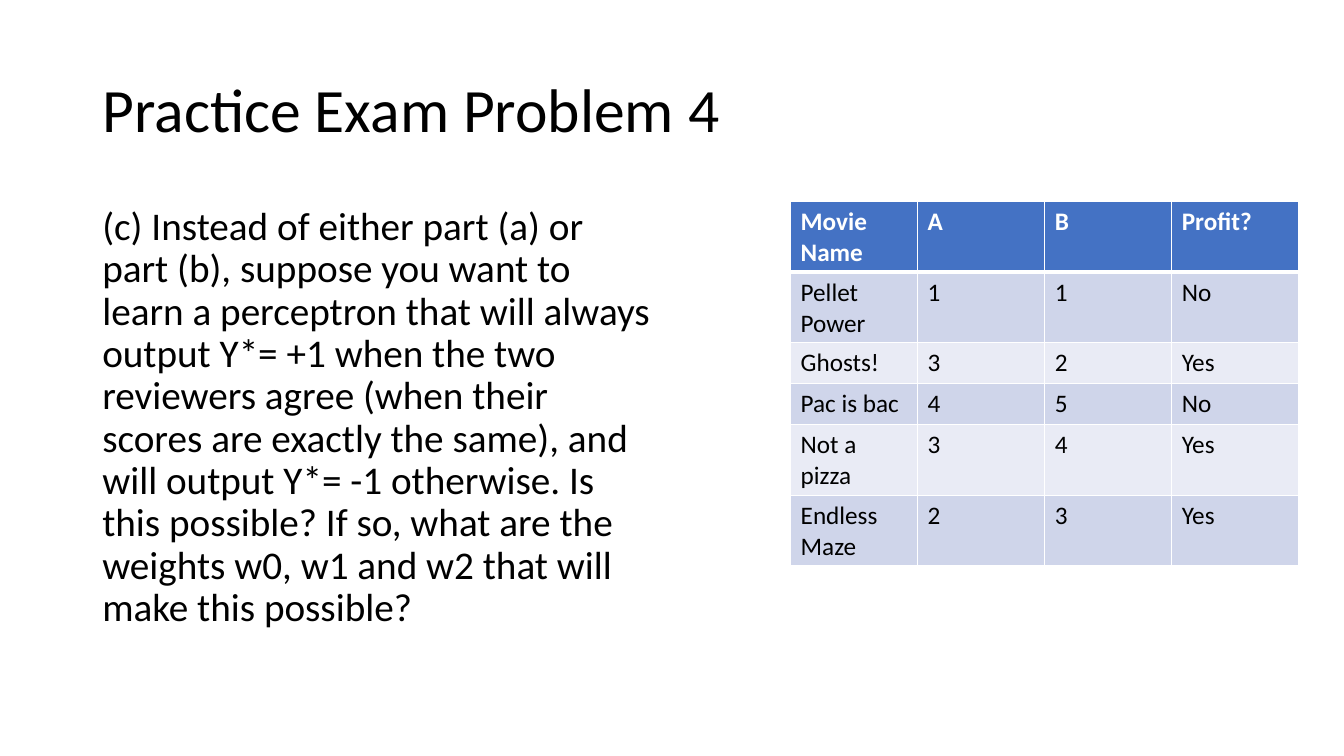
import dataclasses

import pptx
import pptx.dml.color
import pptx.enum.text
import pptx.oxml
import pptx.oxml.ns
import pptx.presentation
import pptx.slide
import pptx.table
import pptx.text.text
import pptx.util

EMU_PER_PX = 9525


@dataclasses.dataclass(frozen=True)
class Theme:
    font: str = "Calibri"
    ink: str = "000000"
    paper: str = "FFFFFF"
    header: str = "4472C4"
    bands: tuple[str, str] = ("CFD5EA", "E9EBF5")
    title_size: int = 44
    question_size: int = 28
    table_size: int = 18
    rule: int = 1
    header_rule: int = 3


@dataclasses.dataclass(frozen=True)
class Box:
    left: int
    top: int
    width: int
    height: int

    def emu(self) -> tuple[int, int, int, int]:
        return px(self.left), px(self.top), px(self.width), px(self.height)


@dataclasses.dataclass(frozen=True)
class Movie:
    name: str
    score_a: int
    score_b: int
    profit: str

    def texts(self) -> list[str]:
        return [str(value) for value in dataclasses.astuple(self)]


THEME = Theme()
TITLE_BOX = Box(88, 38, 1104, 139)
QUESTION_BOX = Box(88, 192, 544, 457)
TABLE_BOX = Box(753, 192, 484, 234)

TITLE = "Practice Exam Problem 4"
QUESTION = (
    "(c) Instead of either part (a) or part (b), suppose you want to learn a "
    "perceptron that will always output Y*= +1 when the two reviewers agree "
    "(when their scores are exactly the same), and will output Y*= -1 otherwise. "
    "Is this possible? If so, what are the weights w0, w1 and w2 that will make "
    "this possible?"
)
HEADINGS = ["Movie Name", "A", "B", "Profit?"]
MOVIES = [
    Movie("Pellet Power", 1, 1, "No"),
    Movie("Ghosts!", 3, 2, "Yes"),
    Movie("Pac is bac", 4, 5, "No"),
    Movie("Not a pizza", 3, 4, "Yes"),
    Movie("Endless Maze", 2, 3, "Yes"),
]


def px(length: int) -> pptx.util.Emu:
    return pptx.util.Emu(length * EMU_PER_PX)


def rgb(value: str) -> pptx.dml.color.RGBColor:
    return pptx.dml.color.RGBColor.from_string(value)


def write(frame: pptx.text.text.TextFrame, text: str, size: int,
          color: str = THEME.ink, bold: bool = False) -> pptx.text.text._Paragraph:
    """Put one left-aligned run in the frame and return its paragraph."""
    paragraph = frame.paragraphs[0]
    paragraph.alignment = pptx.enum.text.PP_ALIGN.LEFT
    run = paragraph.add_run()
    run.text = text
    run.font.name = THEME.font
    run.font.size = pptx.util.Pt(size)
    run.font.bold = bold
    run.font.color.rgb = rgb(color)
    return paragraph


def add_title(slide: pptx.slide.Slide) -> None:
    title = slide.shapes.title
    title.left, title.top, title.width, title.height = TITLE_BOX.emu()
    frame = title.text_frame
    frame.auto_size = pptx.enum.text.MSO_AUTO_SIZE.NONE
    frame.vertical_anchor = pptx.enum.text.MSO_ANCHOR.MIDDLE
    write(frame, TITLE, THEME.title_size).line_spacing = 0.9


def add_question(slide: pptx.slide.Slide) -> None:
    frame = slide.shapes.add_textbox(*QUESTION_BOX.emu()).text_frame
    frame.word_wrap = True
    paragraph = write(frame, QUESTION, THEME.question_size)
    paragraph.line_spacing = 0.9
    paragraph.space_before = pptx.util.Pt(10)


def set_borders(cell: pptx.table._Cell, top: int, bottom: int) -> None:
    """Rule all four sides; top and bottom are line widths in points."""
    properties = cell._tc.get_or_add_tcPr()
    sides = {"lnL": THEME.rule, "lnR": THEME.rule, "lnT": top, "lnB": bottom}
    for position, (side, width) in enumerate(sides.items()):
        properties.insert(position, pptx.oxml.parse_xml(
            f'<a:{side} {pptx.oxml.ns.nsdecls("a")} w="{pptx.util.Pt(width)}">'
            f'<a:solidFill><a:srgbClr val="{THEME.paper}"/></a:solidFill></a:{side}>'
        ))


def add_movie_table(slide: pptx.slide.Slide) -> None:
    rows = [HEADINGS] + [movie.texts() for movie in MOVIES]
    table = slide.shapes.add_table(len(rows), len(HEADINGS), *TABLE_BOX.emu()).table
    for row, texts in enumerate(rows):
        is_header = row == 0
        fill = THEME.header if is_header else THEME.bands[(row - 1) % 2]
        color = THEME.paper if is_header else THEME.ink
        top = THEME.header_rule if row == 1 else THEME.rule
        bottom = THEME.header_rule if is_header else THEME.rule
        for column, text in enumerate(texts):
            cell = table.cell(row, column)
            cell.fill.solid()
            cell.fill.fore_color.rgb = rgb(fill)
            set_borders(cell, top, bottom)
            write(cell.text_frame, text, THEME.table_size, color, is_header)


def main() -> None:
    deck = pptx.Presentation()
    deck.slide_width, deck.slide_height = px(1280), px(720)
    slide = deck.slides.add_slide(deck.slide_layouts.get_by_name("Title Only"))
    slide.background.fill.solid()
    slide.background.fill.fore_color.rgb = rgb(THEME.paper)
    add_title(slide)
    add_question(slide)
    add_movie_table(slide)
    deck.save("out.pptx")


if __name__ == "__main__":
    main()
